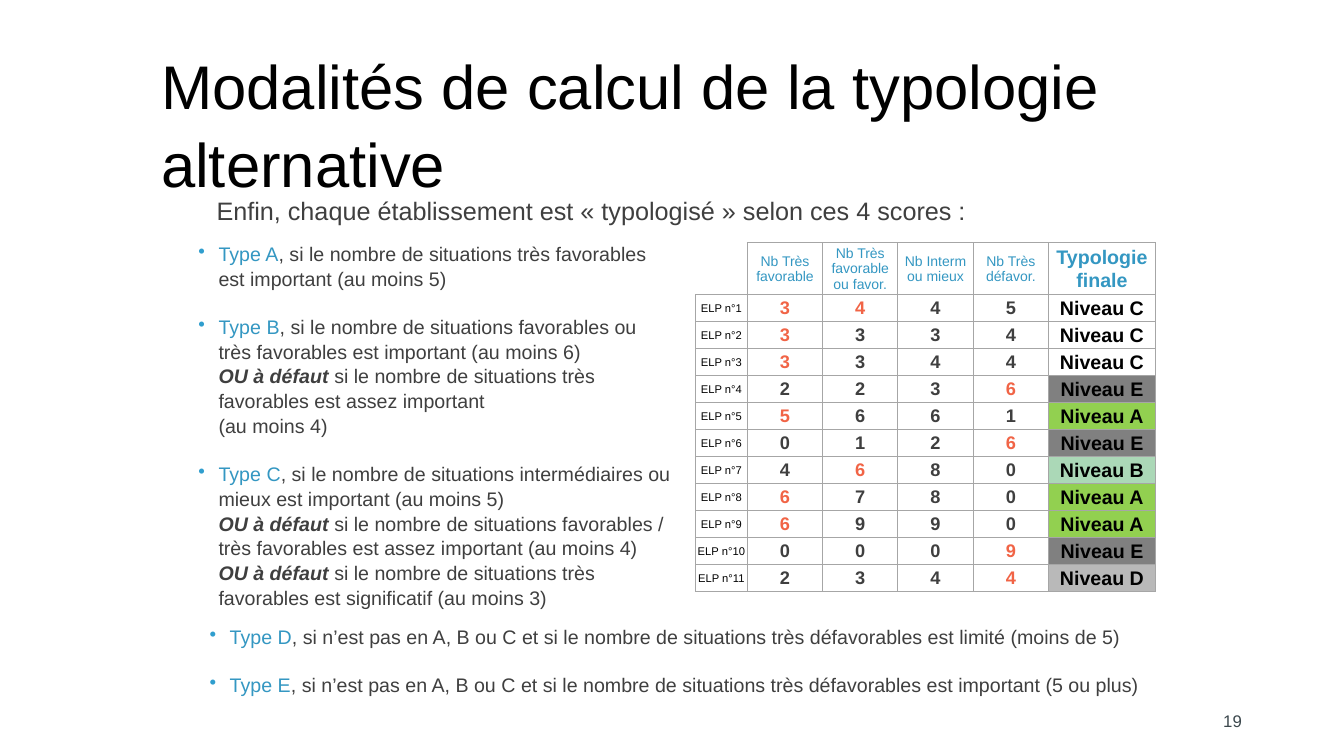
from lxml.etree import SubElement as Sub
from pptx import Presentation
from pptx.dml.color import RGBColor as Rgb
from pptx.enum.text import MSO_ANCHOR as Anchor, PP_ALIGN as Align
from pptx.oxml.ns import qn
from pptx.util import Pt

BLACK = Rgb(0x00, 0x00, 0x00)
DARK = Rgb(0x3F, 0x3F, 0x3F)
SLATE = Rgb(0x3C, 0x48, 0x4D)
BLUE = Rgb(0x34, 0x97, 0xC2)
DOT = Rgb(0x30, 0x9E, 0xCE)
RED = Rgb(0xF1, 0x64, 0x46)
EDGE = Rgb(0xA6, 0xA6, 0xA6)
FILLS = {
    "A": Rgb(0x92, 0xD0, 0x50),
    "B": Rgb(0xAB, 0xD8, 0xB7),
    "D": Rgb(0xB9, 0xB9, 0xB9),
    "E": Rgb(0x80, 0x80, 0x80),
}

# Score column -> least value that is shown in red, for each level
LIMITS = {"A": {0: 5}, "B": {1: 6}, "C": {0: 3, 1: 4, 2: 5},
          "D": {3: 0}, "E": {3: 5}}

HEADS = ["Nb Très favorable", "Nb Très favorable\nou favor.",
         "Nb Interm ou mieux", "Nb Très défavor."]
SCORES = [
    (3, 4, 4, 5, "C"), (3, 3, 3, 4, "C"), (3, 3, 4, 4, "C"),
    (2, 2, 3, 6, "E"), (5, 6, 6, 1, "A"), (0, 1, 2, 6, "E"),
    (4, 6, 8, 0, "B"), (6, 7, 8, 0, "A"), (6, 9, 9, 0, "A"),
    (0, 0, 0, 9, "E"), (2, 3, 4, 4, "D"),
]
WIDTHS = [37, 53.8, 53.8, 53.8, 53.8, 76.6]
HEAD_H, ROW_H = 37.1, 19.3

ELSE = "OU à défaut "
RULES = [
    ("Type A", ", si le nombre de situations très favorables est important (au moins 5)"),
    ("Type B", ", si le nombre de situations favorables ou très favorables est important (au moins 6)"),
    (ELSE, "si le nombre de situations très favorables est assez important"),
    ("", "(au moins 4)"),
    ("Type C", ", si le nombre de situations intermédiaires ou mieux est important (au moins 5)"),
    (ELSE, "si le nombre de situations favorables / très favorables est assez important (au moins 4)"),
    (ELSE, "si le nombre de situations très favorables est significatif (au moins 3)"),
]
LAST = [
    ("Type D", ", si n’est pas en A, B ou C et si le nombre de situations très défavorables est limité (moins de 5)"),
    ("Type E", ", si n’est pas en A, B ou C et si le nombre de situations très défavorables est important (5 ou plus)"),
]


def style(run, size, color, bold=False, slant=False):
    font = run.font
    font.name, font.size = "Arial", Pt(size)
    font.bold, font.italic = bold, slant
    font.color.rgb = color


def add_box(slide, left, top, width, height):
    box = slide.shapes.add_textbox(Pt(left), Pt(top), Pt(width), Pt(height))
    box.text_frame.word_wrap = True
    return box.text_frame


def add_line(slide, area, text, size, color):
    """One paragraph in a box of its own."""
    frame = add_box(slide, *area)
    frame.text = text
    para = frame.paragraphs[0]
    para.line_spacing = 1.05
    style(para.runs[0], size, color)
    return frame


def indent(para, dot):
    """Hang the text, with a bullet if dot is set."""
    props = para._p.get_or_add_pPr()
    props.set("marL", str(Pt(14.4)))
    props.set("indent", str(Pt(-14.4 if dot else 0)))
    if dot:
        tint = Sub(props, qn("a:buClr"))
        Sub(tint, qn("a:srgbClr")).set("val", str(DOT))
        Sub(props, qn("a:buChar")).set("char", "•")


def add_rules(slide, area, rules):
    """List of types, each with its other conditions below."""
    frame = add_box(slide, *area)
    for i, (lead, rest) in enumerate(rules):
        para = frame.add_paragraph() if i else frame.paragraphs[0]
        dot = lead.startswith("Type")
        indent(para, dot)
        para.line_spacing = 1.05
        if i and dot:
            para.space_before = Pt(16.9)
        if lead:
            run = para.add_run()
            run.text = lead
            style(run, 14, BLUE if dot else DARK, not dot, not dot)
        run = para.add_run()
        run.text = rest
        style(run, 14, DARK)


def set_edges(cell, bare=()):
    """Thin grey lines, left out on the bare sides."""
    props = cell._tc.get_or_add_tcPr()
    for i, side in enumerate(("lnL", "lnR", "lnT", "lnB")):
        line = props.makeelement(qn("a:" + side), {"w": str(Pt(0.75))})
        props.insert(i, line)
        if side in bare:
            Sub(line, qn("a:noFill"))
        else:
            fill = Sub(line, qn("a:solidFill"))
            Sub(fill, qn("a:srgbClr")).set("val", str(EDGE))


def set_cell(cell, text, size, color, bold=False, fill=None):
    cell.margin_left = cell.margin_right = cell.margin_top = Pt(0.7)
    cell.margin_bottom = Pt(0)
    cell.vertical_anchor = Anchor.MIDDLE
    cell.text = text
    for para in cell.text_frame.paragraphs:
        para.alignment = Align.CENTER
        for run in para.runs:
            style(run, size, color, bold)
    if fill is None:
        cell.fill.background()
    else:
        cell.fill.solid()
        cell.fill.fore_color.rgb = fill
    set_edges(cell)


def add_scores(slide, left, top):
    count = len(SCORES)
    table = slide.shapes.add_table(
        count + 1, len(WIDTHS), Pt(left), Pt(top),
        Pt(sum(WIDTHS)), Pt(HEAD_H + count * ROW_H)).table
    table.first_row = table.horz_banding = False
    for col, width in zip(table.columns, WIDTHS):
        col.width = Pt(width)
    for i, row in enumerate(table.rows):
        row.height = Pt(ROW_H if i else HEAD_H)

    # Head row
    corner = table.cell(0, 0)
    corner.fill.background()
    set_edges(corner, ("lnL", "lnT"))
    for col, head in enumerate(HEADS, 1):
        set_cell(table.cell(0, col), head, 10, BLUE)
    set_cell(table.cell(0, 5), "Typologie finale", 14, BLUE, True)

    # One row per school
    for row, (*marks, level) in enumerate(SCORES, 1):
        set_cell(table.cell(row, 0), f"ELP n°{row}", 8, BLACK)
        for i, mark in enumerate(marks):
            limit = LIMITS[level].get(i)
            hit = limit is not None and mark >= limit
            set_cell(table.cell(row, i + 1), str(mark), 13,
                     RED if hit else DARK, True)
        set_cell(table.cell(row, 5), f"Niveau {level}", 14, BLACK, True,
                 FILLS.get(level))


def main():
    deck = Presentation()
    deck.slide_width, deck.slide_height = Pt(960), Pt(540)
    slide = deck.slides.add_slide(deck.slide_layouts[6])

    # Page number
    page = add_line(slide, (678.2, 500.4, 216, 28.8), "19", 12, SLATE)
    page.vertical_anchor = Anchor.MIDDLE
    page.paragraphs[0].alignment = Align.RIGHT

    # Title and lead-in
    add_line(slide, (108, 28.1, 753.8, 113.8),
             "Modalités de calcul de la typologie alternative", 44, BLACK)
    add_line(slide, (147.6, 134.6, 686.2, 28.8),
             "Enfin, chaque établissement est « typologisé » selon ces 4 scores :",
             18, DARK)

    # Scores and rules
    add_scores(slide, 496.8, 173.4)
    add_rules(slide, (134.6, 168.5, 353.5, 262), RULES)
    add_rules(slide, (142.6, 442, 691.2, 58.3), LAST)

    deck.save("out.pptx")


if __name__ == "__main__":
    main()
